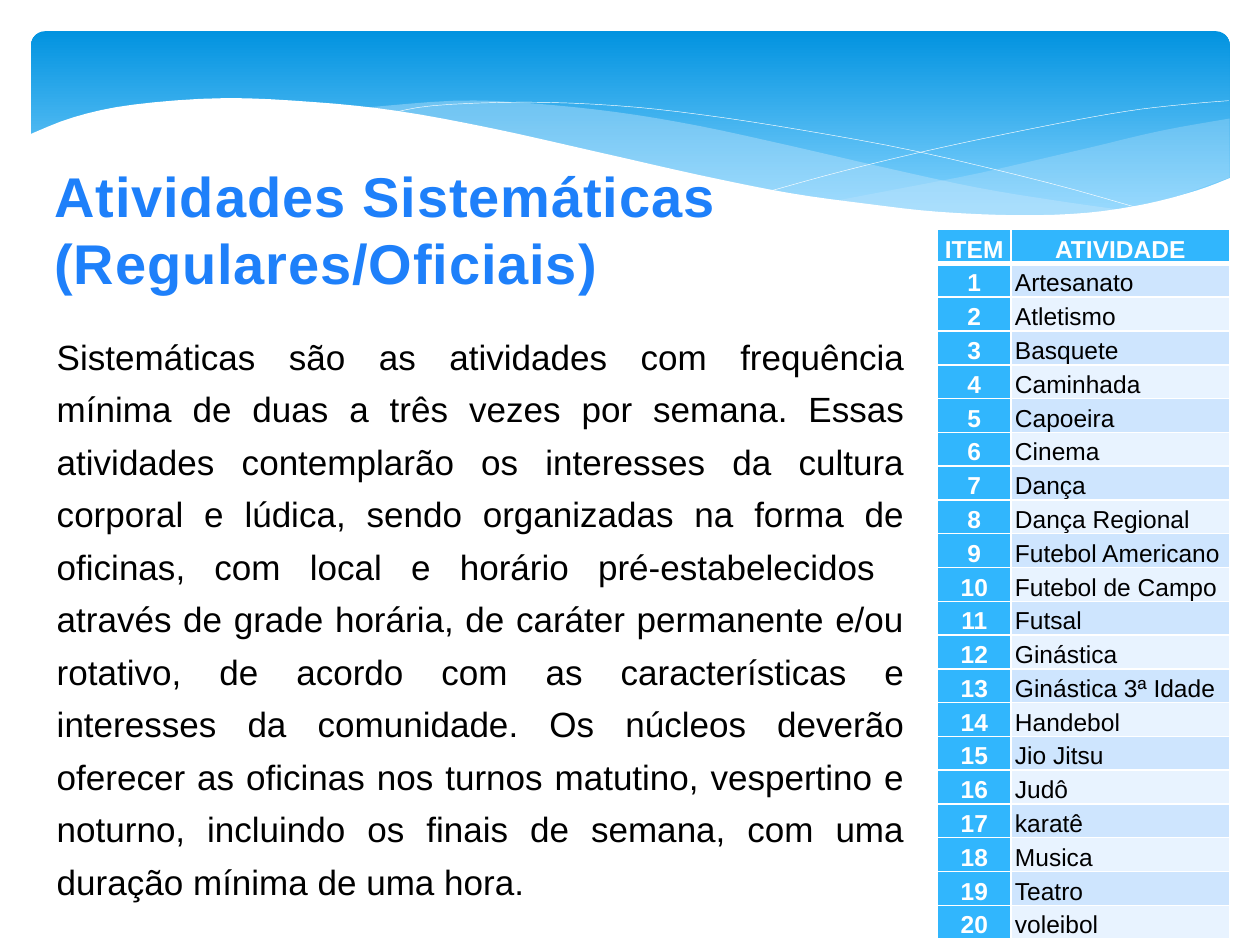
import pptx
import pptx.dml.color
import pptx.enum.shapes
import pptx.enum.text
import pptx.oxml
import pptx.oxml.ns
import pptx.util

Cm, Pt = pptx.util.Cm, pptx.util.Pt
ALIGN = pptx.enum.text.PP_ALIGN
ANCHOR = pptx.enum.text.MSO_ANCHOR
DRAWING = pptx.oxml.ns.nsdecls("a")


def color(value):
    return pptx.dml.color.RGBColor.from_string(value)


def smooth(points, steps=4):
    """Catmull-Rom curve through the points."""
    ends = [points[0], *points, points[-1]]
    curve = []
    for a, b, c, d in zip(ends, ends[1:], ends[2:], ends[3:]):
        for t in (step / steps for step in range(steps)):
            curve.append(tuple(
                q + t * ((r - p) + t * ((2 * p - 5 * q + 4 * r - s) + t * (3 * q - p - 3 * r + s))) / 2
                for p, q, r, s in zip(a, b, c, d)))
    return curve + [points[-1]]


class SlideBuilder:
    font = "Arial"
    white, black, title_blue = "FFFFFF", "000000", "1E80FA"
    header, bands = "31B6FD", ("CEE5FE", "E8F3FF")
    sheet = "C6E7FC"

    def __init__(self, deck):
        self.page = deck.slides.add_slide(deck.slide_layouts[1])

    def format_runs(self, para, size, fill, bold=False, spacing=None):
        for span in para.runs:
            span.font.name = self.font
            span.font.size = Pt(size)
            span.font.bold = bold
            span.font.color.rgb = color(fill)
            if spacing is not None:
                span.font._element.set("spc", str(spacing))

    def banner(self, left, top, width, height, stops):
        box = self.page.shapes.add_shape(
            pptx.enum.shapes.MSO_SHAPE.ROUNDED_RECTANGLE, Cm(left), Cm(top), Cm(width), Cm(height))
        box.adjustments[0] = 0.07
        box.shadow.inherit = False
        box.line.fill.background()
        box.fill.gradient()
        box.fill.gradient_angle = 270
        for stop, (position, value) in zip(box.fill.gradient_stops, stops):
            stop.position = position
            stop.color.rgb = color(value)

    def curve(self, points, closed):
        (x, y), *rest = [(Cm(x), Cm(y)) for x, y in points]
        builder = self.page.shapes.build_freeform(x, y)
        builder.add_line_segments(rest, close=closed)
        shape = builder.convert_to_shape()
        shape.shadow.inherit = False
        return shape

    def area(self, points, fill, opacity=100):
        shape = self.curve(points, True)
        shape.line.fill.background()
        shape.fill.solid()
        shape.fill.fore_color.rgb = color(fill)
        if opacity < 100:
            shape.fill._xPr.solidFill[0].append(pptx.oxml.parse_xml(
                f'<a:alpha {DRAWING} val="{opacity * 1000}"/>'))

    def hairline(self, points):
        shape = self.curve(smooth(points), False)
        shape.fill.background()
        shape.line.color.rgb = color(self.white)
        shape.line.width = Pt(0.25)

    def place(self, box, left, top, width, height, wrap):
        box.left, box.top, box.width, box.height = Cm(left), Cm(top), Cm(width), Cm(height)
        box.element.getparent().append(box.element)  # in front of the waves
        frame = box.text_frame
        frame.word_wrap = wrap
        frame.auto_size = pptx.enum.text.MSO_AUTO_SIZE.NONE
        frame.vertical_anchor = ANCHOR.TOP
        return frame

    def title(self, text, *place):
        frame = self.place(self.page.shapes.title, *place, wrap=False)
        frame.text = text
        for para in frame.paragraphs:
            para.alignment = ALIGN.LEFT
            self.format_runs(para, 32, self.title_blue, bold=True, spacing=50)

    def body(self, text, *place):
        frame = self.place(self.page.placeholders[1], *place, wrap=True)
        frame.text = text
        para = frame.paragraphs[0]
        para.alignment = ALIGN.JUSTIFY
        para.line_spacing = Pt(30)
        para.space_before = Pt(0)
        props = para._p.get_or_add_pPr()
        props.set("marL", "0")
        props.set("indent", "0")
        props.append(pptx.oxml.parse_xml(f"<a:buNone {DRAWING}/>"))
        self.format_runs(para, 20, self.black)

    def borders(self, cell, **widths):
        props = cell._tc.get_or_add_tcPr()
        for side in "LRTB":
            width = Pt(widths.get(side, 1))
            props.append(pptx.oxml.parse_xml(
                f'<a:ln{side} {DRAWING} w="{width}"><a:solidFill>'
                f'<a:srgbClr val="{self.white}"/></a:solidFill></a:ln{side}>'))

    def cell(self, cell, text, fill, strong):
        cell.margin_left = cell.margin_right = Cm(0.08)
        cell.margin_top = cell.margin_bottom = 0
        cell.vertical_anchor = ANCHOR.BOTTOM
        cell.fill.solid()
        cell.fill.fore_color.rgb = color(fill)
        cell.text_frame.text = text
        para = cell.text_frame.paragraphs[0]
        para.alignment = ALIGN.CENTER if strong else ALIGN.LEFT
        para.line_spacing = 1.15
        self.format_runs(para, 14, self.white if strong else self.black, bold=strong)

    def table(self, rows, left, top, widths, height):
        table = self.page.shapes.add_table(
            len(rows), len(widths), Cm(left), Cm(top), Cm(sum(widths)), Cm(height)).table
        for column, width in zip(table.columns, widths):
            column.width = Cm(width)
        for r, row in enumerate(rows):
            for c, text in enumerate(row):
                cell = table.cell(r, c)
                strong = r == 0 or c == 0
                self.borders(cell, T=3 if r == 1 else 1, B=3 if r == 0 else 1)
                self.cell(cell, text, self.header if strong else self.bands[(r - 1) % 2], strong)


# Wave outlines, in centimetres
RIGHT_TOP = [(24.79, 2.39), (23.39, 2.64), (21.87, 3), (19.79, 3.48), (18.52, 3.73), (16.79, 4.06)]
RIGHT_BOTTOM = [(16.79, 4.06), (18.26, 4.24), (19.53, 4.34), (20.93, 4.37), (22.15, 4.29),
                (23.39, 4.06), (24.79, 3.58)]
MIDDLE_TOP = [(22.68, 4.24), (21.26, 4.04), (19.69, 3.78), (17.93, 3.4), (15.98, 2.95), (14.1, 2.54),
              (12.42, 2.26), (10.67, 2.08), (9.17, 2.03), (7.26, 2.18)]
MIDDLE_BOTTOM = [(7.26, 2.18), (8.69, 2.39), (10.26, 2.69), (12.47, 3.2), (14.38, 3.63), (16.1, 3.96),
                 (17.65, 4.19), (19.33, 4.34), (20.78, 4.39), (21.77, 4.34), (22.68, 4.24)]
FALLING = [(7.85, 2.29), (8.74, 2.13), (10.57, 2.06), (12.42, 2.13), (14.12, 2.31), (16.15, 2.62),
           (18.47, 3.05), (21.11, 3.68), (23.04, 4.22)]
RISING = [(15.57, 3.84), (17.07, 3.43), (19, 2.97), (21.23, 2.51), (22.73, 2.24), (23.83, 2.11),
          (24.77, 2.03)]
CREST = [(0.58, 2.72), (1.5, 2.36), (2.69, 2.11), (4.5, 1.98), (6.35, 2.06), (8.03, 2.24), (9.93, 2.59),
         (12.07, 3.07), (14.1, 3.53), (15.9, 3.89), (17.48, 4.11), (18.9, 4.27), (20.55, 4.34),
         (21.92, 4.29), (23.11, 4.11), (24.13, 3.84), (24.82, 3.58)]

ACTIVITIES = [
    "Artesanato", "Atletismo", "Basquete", "Caminhada", "Capoeira", "Cinema", "Dança",
    "Dança Regional", "Futebol Americano", "Futebol de Campo", "Futsal", "Ginástica",
    "Ginástica 3ª Idade", "Handebol", "Jio Jitsu", "Judô", "karatê", "Musica", "Teatro", "voleibol"]

BODY = (
    "Sistemáticas são as atividades com frequência mínima de duas a três vezes por semana. "
    "Essas atividades contemplarão os interesses da cultura corporal e lúdica, sendo organizadas "
    "na forma de oficinas, com local e horário pré-estabelecidos  através de grade horária, de "
    "caráter permanente e/ou rotativo, de acordo com as características e interesses da "
    "comunidade. Os núcleos deverão oferecer as oficinas nos turnos matutino, vespertino e "
    "noturno, incluindo os finais de semana, com uma duração mínima de uma hora.")


def main():
    deck = pptx.Presentation()
    deck.slide_width, deck.slide_height = Cm(25.4), Cm(19.05)
    slide = SlideBuilder(deck)

    # Banner with waves
    slide.banner(0.63, 0.63, 24.16, 3.96, [(0, "0293E0"), (0.9, "83D3FE")])
    slide.area(smooth(RIGHT_TOP) + smooth(RIGHT_BOTTOM), slide.sheet, 29)
    slide.area(smooth(MIDDLE_TOP) + smooth(MIDDLE_BOTTOM), slide.sheet, 40)
    slide.hairline(FALLING)
    slide.hairline(RISING)
    slide.area(smooth(CREST) + [(24.82, 5.69), (0.58, 5.69)], slide.white)

    # Table of activities
    rows = [("ITEM", "ATIVIDADE")]
    rows += [(str(number), name) for number, name in enumerate(ACTIVITIES, 1)]
    slide.table(rows, 18.9, 4.63, (1.48, 4.41), 14.31)

    # Title and text
    slide.title("Atividades Sistemáticas\n(Regulares/Oficiais)", 0.84, 3.13, 13.95, 3)
    slide.body(BODY, 0.89, 6.42, 17.6, 11.91)

    deck.save("out.pptx")


if __name__ == "__main__":
    main()
